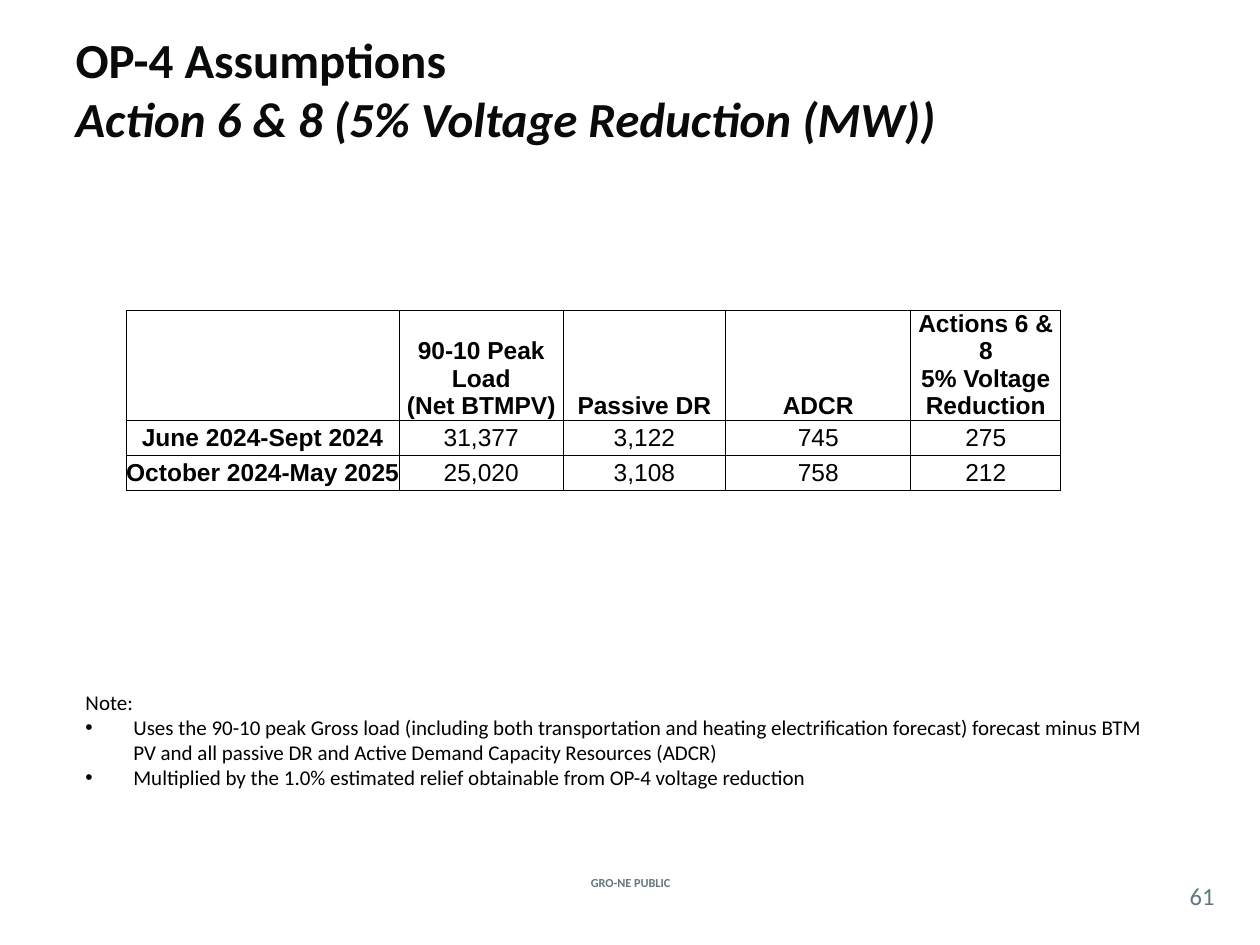
import pptx
import pptx.util
import pptx.dml.color
import pptx.enum.text
import pptx.oxml
import pptx.oxml.ns
from lxml import etree

Inches, Pt = pptx.util.Inches, pptx.util.Pt
ALIGN, ANCHOR = pptx.enum.text.PP_ALIGN, pptx.enum.text.MSO_ANCHOR
qn = pptx.oxml.ns.qn

THEME = {
    "ink": "090B0B", "black": "000000", "grey": "62777F",
    "text_font": "Calibri", "table_font": "Arial",
    "title": 28, "table": 14, "note": 12, "number": 14, "footer": 7,
}


def style(font, size, color, name=THEME["text_font"], bold=False):
    font.size, font.name, font.bold = Pt(THEME[size]), name, bold
    font.color.rgb = pptx.dml.color.RGBColor.from_string(THEME[color])


def add_text(left, top, width, height, text, anchor=ANCHOR.MIDDLE):
    box = page.shapes.add_textbox(*map(Inches, (left, top, width, height)))
    frame = box.text_frame
    frame.word_wrap, frame.vertical_anchor, frame.text = True, anchor, text
    return frame


deck = pptx.Presentation()
deck.slide_width, deck.slide_height = Inches(10), Inches(7.5)
page = deck.slides.add_slide(deck.slide_layouts[5])

# Title
title = page.shapes.title
title.left, title.top, title.width, title.height = map(Inches, (0.5, 0.08, 9, 1.25))
frame = title.text_frame
frame.auto_size = pptx.enum.text.MSO_AUTO_SIZE.NONE
frame.vertical_anchor = ANCHOR.MIDDLE
para = frame.paragraphs[0]
para.text = "OP-4 Assumptions\vAction 6 & 8 (5% Voltage Reduction (MW))"
para.alignment = ALIGN.LEFT
for span in para.runs:
    style(span.font, "title", "ink", bold=True)
para.runs[1].font.italic = True

# Voltage reduction table
rows = [
    ["", "90-10 Peak Load\v(Net BTMPV)", "Passive DR", "ADCR",
     "Actions 6 & 8\v5% Voltage Reduction"],
    ["June 2024-Sept 2024", "31,377", "3,122", "745", "275"],
    ["October 2024-May 2025", "25,020", "3,108", "758", "212"],
]
widths, heights = [2.17, 1.3, 1.29, 1.47, 1.19], [0.45, 0.28, 0.28]
table = page.shapes.add_table(
    len(rows), len(widths), Inches(1), Inches(2.46),
    Inches(sum(widths)), Inches(sum(heights))).table
for column, width in zip(table.columns, widths):
    column.width = Inches(width)
for r, (values, height) in enumerate(zip(rows, heights)):
    table.rows[r].height = Inches(height)
    for c, value in enumerate(values):
        cell = table.cell(r, c)
        cell.margin_left = cell.margin_right = cell.margin_top = cell.margin_bottom = 0
        cell.vertical_anchor = ANCHOR.MIDDLE if r else ANCHOR.BOTTOM
        para = cell.text_frame.paragraphs[0]
        para.text, para.alignment = value, ALIGN.CENTER
        style(para.font, "table", "black", THEME["table_font"])
        for span in para.runs:
            style(span.font, "table", "black", THEME["table_font"], r == 0 or c == 0)
        # Thin border on every side, placed before the fill
        props = cell._tc.get_or_add_tcPr()
        for side in ("a:lnL", "a:lnR", "a:lnT", "a:lnB"):
            line = etree.SubElement(props, qn(side), w=str(Pt(0.5)))
            paint = etree.SubElement(line, qn("a:solidFill"))
            etree.SubElement(paint, qn("a:srgbClr"), val=THEME["black"])
        cell.fill.background()

# Notes
notes = add_text(0.58, 5.42, 8.75, 1.25, "\n".join([
    "Note:",
    "Uses the 90-10 peak Gross load (including both transportation and heating "
    "electrification forecast) forecast minus BTM PV and all passive DR and "
    "Active Demand Capacity Resources (ADCR)",
    "Multiplied by the 1.0% estimated relief obtainable from OP-4 voltage reduction",
]), ANCHOR.TOP)
for i, para in enumerate(notes.paragraphs):
    if i:
        props = para._p.get_or_add_pPr()
        props.set("marL", str(Inches(0.38)))
        props.set("indent", str(-Inches(0.38)))
        etree.SubElement(props, qn("a:buFont"), typeface=THEME["table_font"])
        etree.SubElement(props, qn("a:buChar"), char="•")
    style(para.runs[0].font, "note", "black")

# Footer label and page number
footer = add_text(4.27, 6.92, 1.47, 0.17, "GRO-NE PUBLIC")
number = add_text(9.33, 6.96, 0.42, 0.29, "61")
number.margin_left = number.margin_right = number.margin_top = number.margin_bottom = 0
for frame, size in ((footer, "footer"), (number, "number")):
    para = frame.paragraphs[0]
    para.alignment = ALIGN.CENTER
    style(para.runs[0].font, size, "grey", bold=size == "footer")

deck.save("out.pptx")
